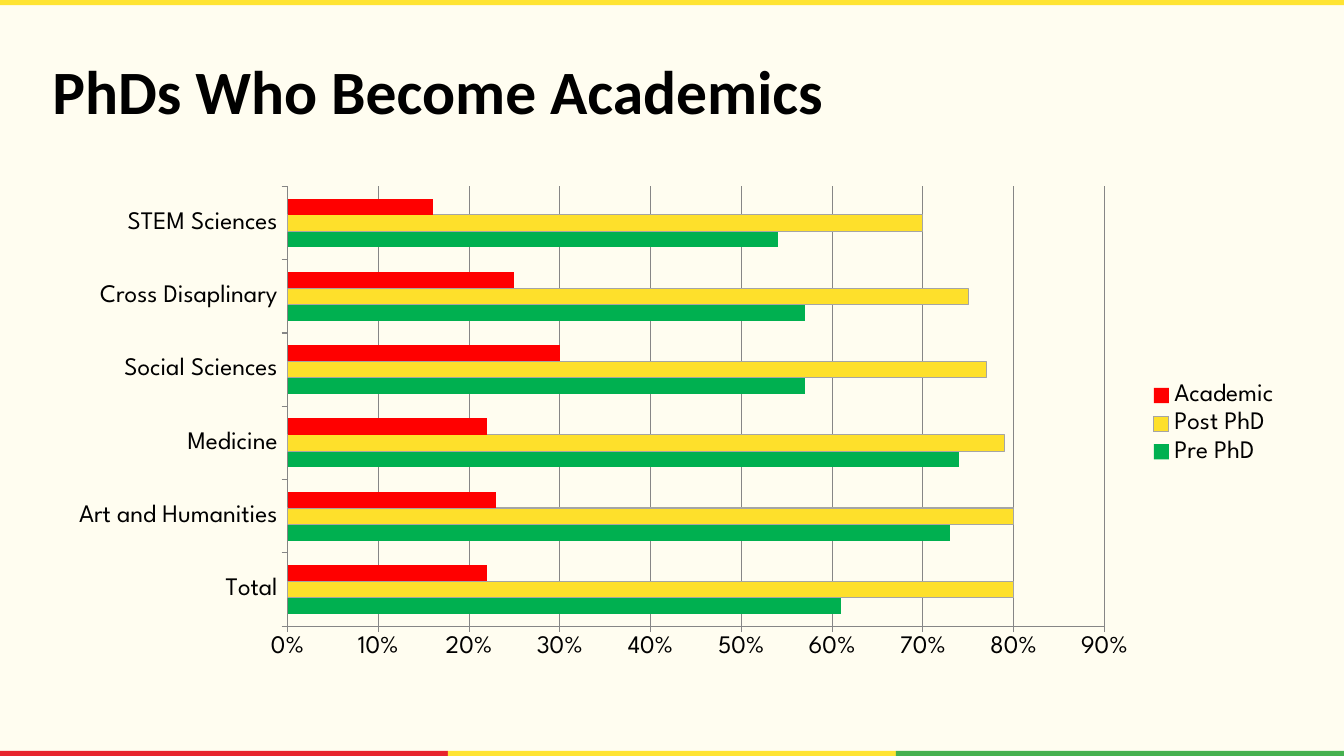
from dataclasses import dataclass

from lxml.etree import SubElement
from pptx import Presentation
from pptx.chart.data import CategoryChartData
from pptx.chart.chart import Chart
from pptx.dml.color import RGBColor
from pptx.enum.chart import XL_CHART_TYPE, XL_LEGEND_POSITION, XL_TICK_MARK
from pptx.enum.shapes import MSO_SHAPE
from pptx.enum.text import MSO_ANCHOR, PP_ALIGN
from pptx.oxml.ns import qn
from pptx.slide import Slide
from pptx.util import Cm, Pt

PAGE_WIDTH, PAGE_HEIGHT = 33.87, 19.05
MARGIN, CONTENT_WIDTH = 1.32, 31.19
STRIPE_HEIGHT = 0.13
BLACK, GREY, YELLOW = "000000", "868686", "FFE433"


@dataclass
class Stripe:
    left: float
    top: float
    width: float
    color: str


@dataclass
class Series:
    name: str
    values: list[float]
    color: str
    outline: str | None = None


THIRD = PAGE_WIDTH / 3
STRIPES = [Stripe(0, 0, PAGE_WIDTH, YELLOW)] + [
    Stripe(index * THIRD, PAGE_HEIGHT - STRIPE_HEIGHT, THIRD, color)
    for index, color in enumerate(["E7242D", YELLOW, "45B14F"])
]
FIELDS = ["Total", "Art and Humanities", "Medicine", "Social Sciences",
          "Cross Disaplinary", "STEM Sciences"]
SERIES = [
    Series("Pre PhD", [0.61, 0.73, 0.74, 0.57, 0.57, 0.54], "00B050"),
    Series("Post PhD", [0.8, 0.8, 0.79, 0.77, 0.75, 0.7], "FEE02B", "A5A5A5"),
    Series("Academic", [0.22, 0.23, 0.22, 0.3, 0.25, 0.16], "FF0000"),
]
PLOT_AREA = {"x": 0.19, "y": 0.02, "w": 0.66, "h": 0.89}


def rgb(color: str) -> RGBColor:
    return RGBColor.from_string(color)


def add_stripe(page: Slide, stripe: Stripe) -> None:
    box = page.shapes.add_shape(MSO_SHAPE.RECTANGLE, Cm(stripe.left), Cm(stripe.top),
                                Cm(stripe.width), Cm(STRIPE_HEIGHT))
    box.shadow.inherit = False
    box.fill.solid()
    box.fill.fore_color.rgb = rgb(stripe.color)
    box.line.fill.background()


def set_title(page: Slide, text: str) -> None:
    title = page.shapes.title
    title.left, title.top = Cm(MARGIN), Cm(1.32)
    title.width, title.height = Cm(CONTENT_WIDTH), Cm(1.88)
    frame = title.text_frame
    frame.margin_left = frame.margin_right = frame.margin_top = frame.margin_bottom = 0
    frame.vertical_anchor = MSO_ANCHOR.MIDDLE
    frame.word_wrap = True
    para = frame.paragraphs[0]
    para.alignment = PP_ALIGN.LEFT
    span = para.add_run()
    span.text = text
    span.font.name, span.font.size, span.font.bold = "Calibri", Pt(44), True
    span.font.color.rgb = rgb(BLACK)


def place_plot_area(chart: Chart) -> None:
    """Fix the inner plot area as fractions of the chart."""
    plot_area = chart.plots[0]._element.getparent()
    for old_layout in plot_area.findall(qn("c:layout")):
        plot_area.remove(old_layout)
    layout = SubElement(plot_area, qn("c:layout"))
    plot_area.insert(0, layout)
    manual = SubElement(layout, qn("c:manualLayout"))
    settings = {"layoutTarget": "inner", "xMode": "edge", "yMode": "edge", **PLOT_AREA}
    for name, value in settings.items():
        SubElement(manual, qn(f"c:{name}")).set("val", str(value))


def add_bar_chart(page: Slide) -> None:
    data = CategoryChartData(number_format="0%")
    data.categories = FIELDS
    for series in SERIES:
        data.add_series(series.name, series.values)
    chart = page.shapes.add_chart(XL_CHART_TYPE.BAR_CLUSTERED, Cm(MARGIN), Cm(4.45),
                                  Cm(CONTENT_WIDTH), Cm(12.45), data).chart
    chart.has_title = False
    chart.font.name, chart.font.size = "League Spartan", Pt(18)
    chart.font.color.rgb = rgb(BLACK)
    chart.has_legend = True
    chart.legend.position = XL_LEGEND_POSITION.RIGHT
    chart.legend.include_in_layout = False

    values = chart.value_axis
    values.minimum_scale, values.maximum_scale, values.major_unit = 0, 0.9, 0.1
    values.has_major_gridlines = True
    values.tick_labels.number_format = "0%"
    values.tick_labels.number_format_is_linked = False
    for axis in (values, chart.category_axis):
        axis.major_tick_mark = XL_TICK_MARK.OUTSIDE
    for line in (values.format.line, values.major_gridlines.format.line,
                 chart.category_axis.format.line):
        line.color.rgb, line.width = rgb(GREY), Pt(0.75)

    plot = chart.plots[0]
    plot.gap_width, plot.overlap, plot.vary_by_categories = 150, 0, False
    for bars, series in zip(plot.series, SERIES):
        bars.invert_if_negative = False
        bars.format.fill.solid()
        bars.format.fill.fore_color.rgb = rgb(series.color)
        if series.outline:
            bars.format.line.color.rgb = rgb(series.outline)
            bars.format.line.width = Pt(0.75)
        else:
            bars.format.line.fill.background()
    place_plot_area(chart)


def main() -> None:
    deck = Presentation()
    deck.slide_width, deck.slide_height = Cm(PAGE_WIDTH), Cm(PAGE_HEIGHT)
    page = deck.slides.add_slide(deck.slide_layouts.get_by_name("Title Only"))
    page.background.fill.solid()
    page.background.fill.fore_color.rgb = rgb("FFFDF0")
    for stripe in STRIPES:
        add_stripe(page, stripe)
    set_title(page, "PhDs Who Become Academics")
    add_bar_chart(page)
    deck.save("out.pptx")


if __name__ == "__main__":
    main()
